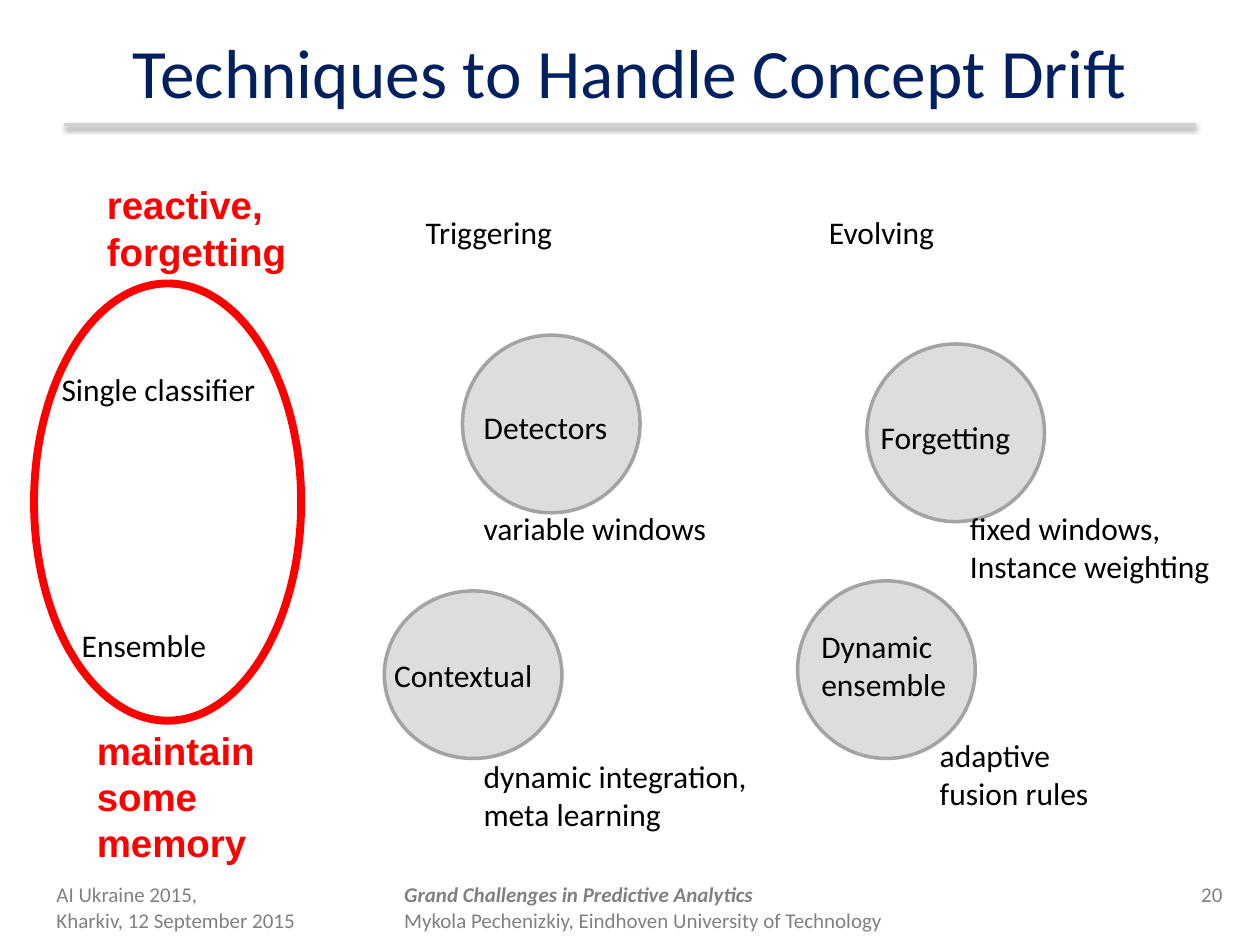
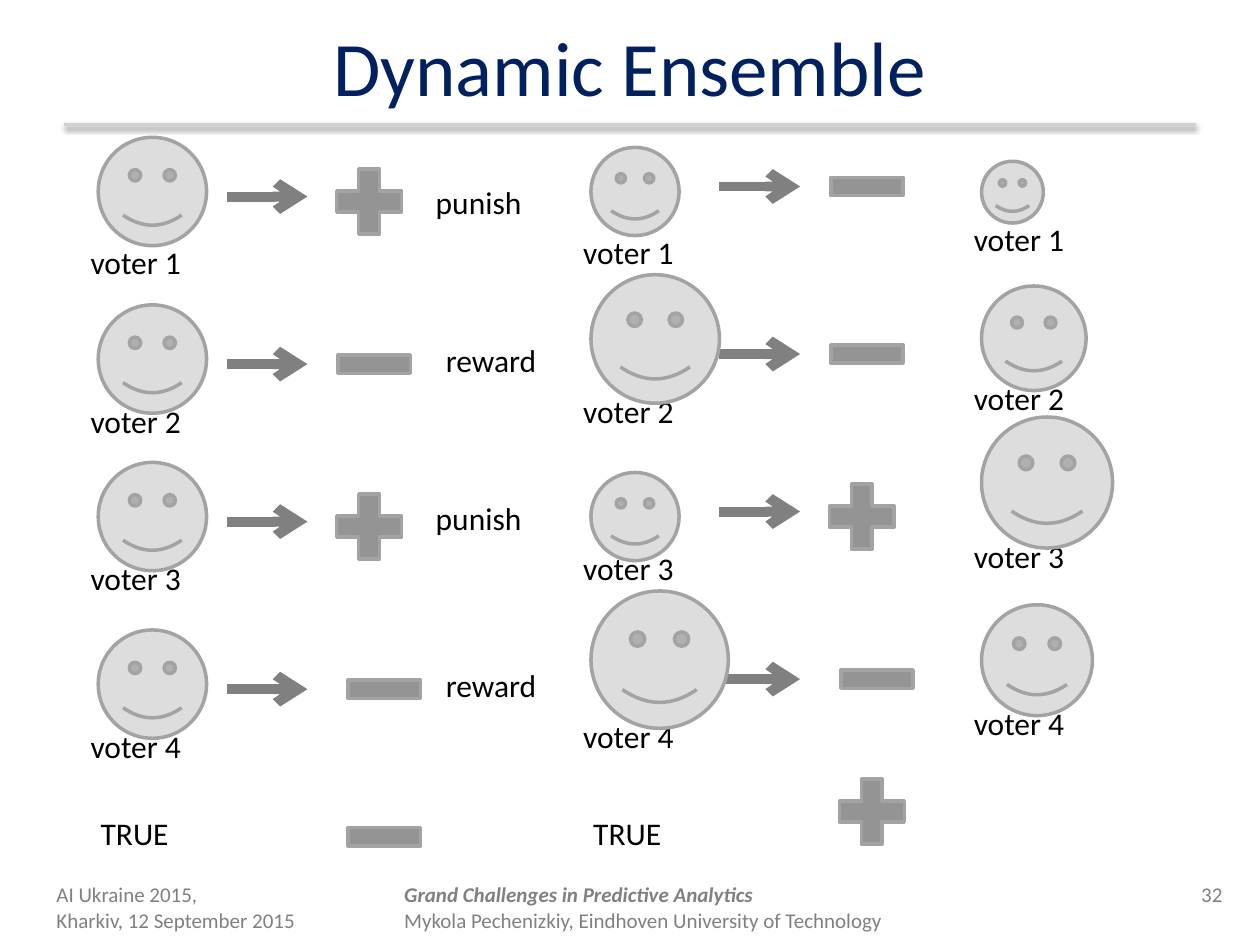
from lxml import etree
from pptx import Presentation
from pptx.dml.color import RGBColor
from pptx.enum import shapes, text
from pptx.oxml.ns import qn
from pptx.util import Inches, Pt

NAVY = RGBColor(0x00, 0x20, 0x60)
BLACK = RGBColor(0x00, 0x00, 0x00)
RED = RGBColor(0xFF, 0x00, 0x00)
GRAY = RGBColor(0x80, 0x80, 0x80)
RULE_GRAY = RGBColor(0xD1, 0xD1, 0xD1)
PALE = RGBColor(0xDD, 0xDD, 0xDD)
OUTLINE = RGBColor(0xA3, 0xA3, 0xA3)
SIGN_FILL = RGBColor(0x94, 0x94, 0x94)

KIND = shapes.MSO_SHAPE
ALIGN = text.PP_ALIGN
TITLE_ONLY = 5


# Shared drawing helpers; every box is (left, top, width, height) in inches
def set_font(font, size, color, name="Calibri", bold=False):
    font.name, font.size, font.bold = name, Pt(size), bold
    font.color.rgb = color


def add_label(page, box, lines, size=18, color=BLACK, name="Calibri", bold=False, align=ALIGN.LEFT):
    frame = page.shapes.add_textbox(*map(Inches, box)).text_frame
    frame.word_wrap = True
    frame.text = lines
    for para in frame.paragraphs:
        para.alignment = align
        set_font(para.font, size, color, name, bold)
    return frame


def add_figure(page, kind, box, fill=PALE, line=OUTLINE, width=2):
    figure = page.shapes.add_shape(kind, *map(Inches, box))
    figure.shadow.inherit = False
    if fill is None:
        figure.fill.background()
    else:
        figure.fill.solid()
        figure.fill.fore_color.rgb = fill
    figure.line.color.rgb = line
    figure.line.width = Pt(width)


def add_line(page, left, right, y, color, width):
    """Draw a horizontal line; return it with its empty effect list."""
    line = page.shapes.add_connector(
        shapes.MSO_CONNECTOR.STRAIGHT, Inches(left), Inches(y), Inches(right), Inches(y))
    line.line.color.rgb = color
    line.line.width = Pt(width)
    effects = etree.SubElement(line._element.spPr, qn("a:effectLst"))
    return line, effects


def add_arrow(page, left, y):
    arrow, _ = add_line(page, left, left + 0.64, y, GRAY, 5.67)
    etree.SubElement(arrow.line._get_or_add_ln(), qn("a:tailEnd"), type="arrow")


# Parts common to both slides
def add_rule(page):
    _, effects = add_line(page, 0.51, 9.49, 0.99, RULE_GRAY, 2)
    shadow = etree.SubElement(effects, qn("a:outerShdw"), blurRad=str(Pt(3.1)),
                              dist=str(Pt(1.6)), dir="5400000", rotWithShape="0")
    tint = etree.SubElement(shadow, qn("a:srgbClr"), val="000000")
    etree.SubElement(tint, qn("a:alpha"), val="38000")


def add_footer(page, number, top=6.95):
    add_label(page, (0.35, top, 2.24, 0.4), "AI Ukraine 2015,\nKharkiv, 12 September 2015", 12, GRAY)
    add_label(page, (9.15, top, 0.65, 0.4), str(number), 12, GRAY, align=ALIGN.RIGHT)
    talk = add_label(page, (3.11, top, 6.14, 0.4), "", 12, GRAY).paragraphs[0]
    heading = talk.add_run()
    heading.text = "Grand Challenges in Predictive Analytics"
    heading.font.bold = heading.font.italic = True
    talk.add_line_break()
    talk.add_run().text = "Mykola Pechenizkiy, Eindhoven University of Technology"


def start_page(deck, heading, size, height, number):
    page = deck.slides.add_slide(deck.slide_layouts[TITLE_ONLY])
    title = page.shapes.title
    title.left, title.top, title.width, title.height = map(Inches, (0.5, 0.05, 9, height))
    frame = title.text_frame
    frame.text = heading
    frame.word_wrap = True
    frame.auto_size = text.MSO_AUTO_SIZE.NONE
    frame.vertical_anchor = text.MSO_ANCHOR.MIDDLE
    para = frame.paragraphs[0]
    para.alignment = ALIGN.CENTER
    set_font(para.font, size, NAVY)
    add_rule(page)
    add_footer(page, number)
    return page


# Slide 1: map of techniques
def add_technique(page, circle, name, name_box, note, note_box):
    add_figure(page, KIND.OVAL, circle)
    add_label(page, name_box, name)
    add_label(page, note_box, note)


def add_memory_group(page, box):
    """Red ring with a caption above and one below."""
    left, top, width, height = box
    add_figure(page, KIND.OVAL, box, None, RED, 4.5)
    captions = [
        ("reactive, forgetting", (left + 0.48, top - 0.86, 1.97, 0.82)),
        ("maintain some memory", (left + 0.4, top + height, 2.2, 1.19)),
    ]
    for words, place in captions:
        add_label(page, place, words, 22, RED, "Arial", True)


def build_techniques(deck):
    page = start_page(deck, "Techniques to Handle Concept Drift", 39.6, 1.02, 20)
    # Column and row headings
    for left, name in ((3.28, "Triggering"), (6.48, "Evolving")):
        add_label(page, (left, 1.64, 2.58, 0.4), name)
    for left, top, name in ((0.39, 2.89, "Single classifier"), (0.55, 4.92, "Ensemble")):
        add_label(page, (left, top, 2.03, 0.4), name)
    # Circle, name and note of each technique
    techniques = [
        ((3.67, 2.66, 1.41, 1.41), "Detectors", (3.74, 3.19, 1.48, 0.4),
         "variable windows", (3.74, 3.99, 2.44, 0.4)),
        ((6.88, 2.73, 1.41, 1.41), "Forgetting", (6.89, 3.27, 1.48, 0.4),
         "fixed windows,\nInstance weighting", (7.6, 3.99, 2.44, 0.7)),
        ((3.05, 4.69, 1.41, 1.33), "Contextual", (3.03, 5.16, 1.5, 0.4),
         "dynamic integration,\nmeta learning", (3.74, 5.96, 2.64, 0.7)),
        ((6.33, 4.61, 1.41, 1.41), "Dynamic ensemble", (6.42, 4.93, 1.25, 0.7),
         "adaptive\nfusion rules", (7.36, 5.79, 2.64, 0.7)),
    ]
    for technique in techniques:
        add_technique(page, *technique)
    add_memory_group(page, (0.27, 2.25, 2.12, 3.47))


# Slide 2: rounds of voting
ROW_STEPS = (0, 1.33, 2.58, 3.91)
VERDICTS = {"+": ("punish", 2.58), "-": ("reward", 2.66)}


def add_sign(page, sign, left, top):
    if sign == "+":
        add_figure(page, KIND.MATH_PLUS, (left, top, 0.7, 0.7), SIGN_FILL)
    else:
        add_figure(page, KIND.MATH_MINUS, (left, top, 0.78, 0.62), SIGN_FILL)


def add_round(page, left, top, face_sizes, votes="", judged=False):
    """One column of voters; top is the height of the first arrow."""
    for row, (step, size) in enumerate(zip(ROW_STEPS, face_sizes)):
        y = top + step
        nudge = 0.07 if row == 0 else 0
        if votes:
            add_arrow(page, left + 1.02, y)
            shift = 0.08 if row == 3 else 0
            add_sign(page, votes[row], left + 1.8 + shift, y - 0.31)
        add_label(page, (left - 0.16, y + 0.25 + nudge, 1.09, 0.4), f"voter {row + 1}")
        add_figure(page, KIND.SMILEY_FACE, (left, y + 0.39 - size, size, size))
        if judged:
            verdict, offset = VERDICTS[votes[row]]
            add_label(page, (left + offset, y - 0.23 + nudge, 1.09, 0.4), verdict)


def add_truth(page, left, sign, sign_top):
    add_label(page, (left - 0.08, 6.41, 1.09, 0.4), "TRUE")
    add_sign(page, sign, left + 1.88, sign_top)


def build_ensemble(deck):
    page = start_page(deck, "Dynamic Ensemble", 44, 0.95, 32)
    first, second, third = 0.78, 4.69, 7.79
    add_round(page, first, 1.56, [0.86] * 4, "+-+-", judged=True)
    add_truth(page, first, "-", 6.33)
    add_round(page, second, 1.48, [0.7, 1.02, 0.7, 1.09], "--+-")
    add_truth(page, second, "+", 6.09)
    add_round(page, third, 1.38, [0.49, 0.83, 1.04, 0.88])


def main():
    deck = Presentation()
    deck.slide_width, deck.slide_height = Inches(10), Inches(7.5)
    build_techniques(deck)
    build_ensemble(deck)
    deck.save("out.pptx")


if __name__ == "__main__":
    main()
